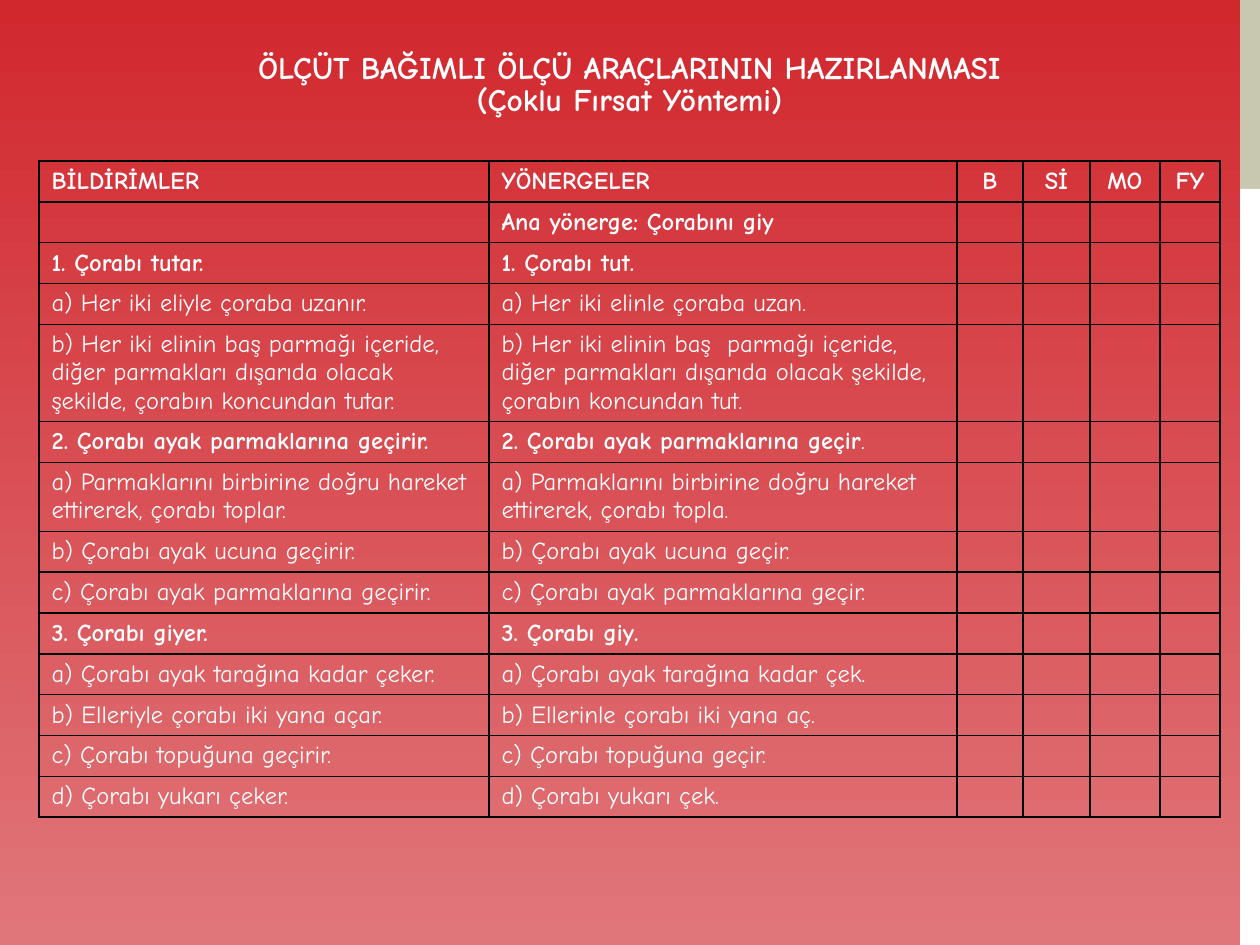
"""Builds a slide with a criterion-referenced checklist for putting on a sock."""
import pptx
import pptx.dml.color
import pptx.enum.shapes
import pptx.enum.text
import pptx.oxml
import pptx.oxml.ns
import pptx.util

RGBColor = pptx.dml.color.RGBColor
ALIGN = pptx.enum.text.PP_ALIGN
WHITE = RGBColor(0xFF, 0xFF, 0xFF)
BLACK = RGBColor(0x00, 0x00, 0x00)
RED = RGBColor(0xD1, 0x28, 0x2E)
PINK = RGBColor(0xE0, 0x76, 0x7A)
SAND = RGBColor(0xC8, 0xC8, 0xB1)
FONT = "Comic Neue"

TITLE = ["ÖLÇÜT BAĞIMLI ÖLÇÜ ARAÇLARININ HAZIRLANMASI", "(Çoklu Fırsat Yöntemi)"]
HEADER = ["BİLDİRİMLER", "YÖNERGELER", "B", "Sİ", "MO", "FY"]
STEPS = [
    ("", "Ana yönerge: Çorabını giy"),
    ("1. Çorabı tutar.", "1. Çorabı tut."),
    ("a) Her iki eliyle çoraba uzanır.", "a) Her iki elinle çoraba uzan."),
    ("b) Her iki elinin baş parmağı içeride, diğer parmakları dışarıda olacak "
     "şekilde, çorabın koncundan tutar.",
     "b) Her iki elinin baş  parmağı içeride, diğer parmakları dışarıda olacak "
     "şekilde, çorabın koncundan tut."),
    ("2. Çorabı ayak parmaklarına geçirir.", "2. Çorabı ayak parmaklarına geçir."),
    ("a) Parmaklarını birbirine doğru hareket ettirerek, çorabı toplar.",
     "a) Parmaklarını birbirine doğru hareket ettirerek, çorabı topla."),
    ("b) Çorabı ayak ucuna geçirir.", "b) Çorabı ayak ucuna geçir."),
    ("c) Çorabı ayak parmaklarına geçirir.", "c) Çorabı ayak parmaklarına geçir."),
    ("3. Çorabı giyer.", "3. Çorabı giy."),
    ("a) Çorabı ayak tarağına kadar çeker.", "a) Çorabı ayak tarağına kadar çek."),
    ("b) Elleriyle çorabı iki yana açar.", "b) Ellerinle çorabı iki yana aç."),
    ("c) Çorabı topuğuna geçirir.", "c) Çorabı topuğuna geçir."),
    ("d) Çorabı yukarı çeker.", "d) Çorabı yukarı çek."),
]
PLAIN_PERIOD = "2. Çorabı ayak parmaklarına geçir."
COLUMN_WIDTHS = [450, 468, 66, 67, 70, 60]
ROW_HEIGHT = 35
SIDE_STRIPS = [(0, 189, SAND), (189, 756, WHITE)]


def px(value):
    return pptx.util.Emu(round(value * 914400 / 126))


def style(paragraph, size, bold, alignment):
    paragraph.alignment = alignment
    paragraph.font.name = FONT
    paragraph.font.size = pptx.util.Pt(size)
    paragraph.font.bold = bold
    paragraph.font.color.rgb = WHITE


def add_borders(cell):
    properties = cell._tc.get_or_add_tcPr()
    for position, side in enumerate(("lnL", "lnR", "lnT", "lnB")):
        properties.insert(position, pptx.oxml.parse_xml(
            f'<a:{side} {pptx.oxml.ns.nsdecls("a")} w="12700"><a:solidFill>'
            f'<a:srgbClr val="{BLACK}"/></a:solidFill></a:{side}>'))


def fill_cell(cell, text, bold, alignment):
    cell.fill.background()
    add_borders(cell)
    paragraph = cell.text_frame.paragraphs[0]
    style(paragraph, 14, bold, alignment)
    if text == PLAIN_PERIOD:
        paragraph.add_run().text = text[:-1]
        period = paragraph.add_run()
        period.text = "."
        period.font.bold = False
    elif text:
        paragraph.add_run().text = text


def add_background(slide):
    fill = slide.background.fill
    fill.gradient()
    fill.gradient_angle = 270
    for stop, color in zip(fill.gradient_stops, (RED, PINK)):
        stop.color.rgb = color
    for top, height, color in SIDE_STRIPS:
        strip = slide.shapes.add_shape(
            pptx.enum.shapes.MSO_SHAPE.RECTANGLE, px(1240), px(top), px(20), px(height))
        strip.shadow.inherit = False
        strip.fill.solid()
        strip.fill.fore_color.rgb = color
        strip.line.fill.background()


def add_title(slide):
    title = slide.shapes.title
    title.left, title.top, title.width, title.height = map(px, (121, 33, 1017, 106))
    frame = title.text_frame
    frame.text = "\n".join(TITLE)
    frame.word_wrap = True
    frame.auto_size = pptx.enum.text.MSO_AUTO_SIZE.NONE
    frame.vertical_anchor = pptx.enum.text.MSO_ANCHOR.MIDDLE
    for paragraph in frame.paragraphs:
        style(paragraph, 18, True, ALIGN.CENTER)
        paragraph.line_spacing = 0.85


def add_checklist(slide):
    row_count = len(STEPS) + 1
    table = slide.shapes.add_table(
        row_count, len(HEADER), px(39), px(161),
        px(sum(COLUMN_WIDTHS)), px(row_count * ROW_HEIGHT)).table
    table.first_row = table.horz_banding = False
    for column, width in zip(table.columns, COLUMN_WIDTHS):
        column.width = px(width)
    for row in table.rows:
        row.height = px(ROW_HEIGHT)
    for index, text in enumerate(HEADER):
        alignment = ALIGN.JUSTIFY if index < 2 else ALIGN.CENTER
        fill_cell(table.cell(0, index), text, True, alignment)
    for row_index, step in enumerate(STEPS, 1):
        bold = step[1][1] != ")"
        for index in range(len(HEADER)):
            text = step[index] if index < len(step) else ""
            fill_cell(table.cell(row_index, index), text, bold, ALIGN.LEFT)


def main():
    presentation = pptx.Presentation()
    presentation.slide_width, presentation.slide_height = px(1260), px(945)
    slide = presentation.slides.add_slide(presentation.slide_layouts[5])
    add_background(slide)
    add_checklist(slide)
    add_title(slide)
    presentation.save("out.pptx")


if __name__ == "__main__":
    main()
